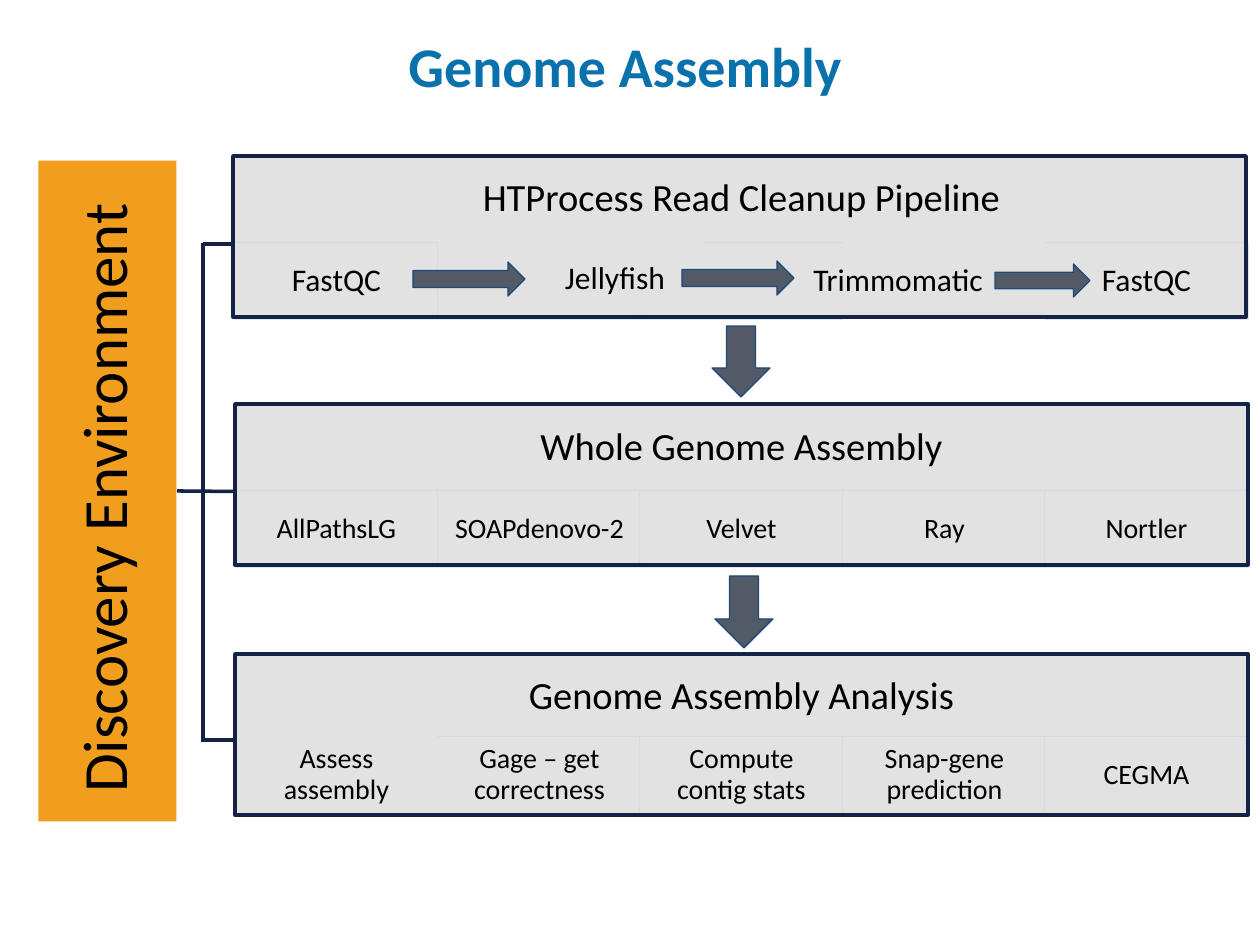
import pptx
import pptx.dml.color
import pptx.enum.shapes
import pptx.enum.text
import pptx.oxml
import pptx.oxml.ns
import pptx.util
import lxml.etree

SHAPE = pptx.enum.shapes.MSO_SHAPE
ALIGN = pptx.enum.text.PP_ALIGN
ANCHOR = pptx.enum.text.MSO_ANCHOR
qn = pptx.oxml.ns.qn

GREY, PALE, NAVY = "E2E2E2", "CFD7E7", "142248"
SLATE, BLUE, ORANGE, TITLE_BLUE = "525A68", "1F497D", "F19E1F", "0971AB"
FONT = "Calibri"


def px(value):
    return pptx.util.Emu(round(value * 914400 / 126))


def rgb(value):
    return pptx.dml.color.RGBColor.from_string(value)


class SlideBuilder:
    def __init__(self, slide):
        self.slide = slide

    def run(self, paragraph, text, size, color="000000", bold=False):
        run = paragraph.add_run()
        run.text = text
        run.font.name = FONT
        run.font.size = pptx.util.Pt(size)
        run.font.bold = bold
        run.font.color.rgb = rgb(color)

    def shape(self, kind, box, fill=None, line=None, width=0.75, alpha=None):
        shape = self.slide.shapes.add_shape(kind, *map(px, box))
        shape.shadow.inherit = False
        if fill:
            shape.fill.solid()
            shape.fill.fore_color.rgb = rgb(fill)
        else:
            shape.fill.background()
        if line:
            shape.line.color.rgb = rgb(line)
            shape.line.width = pptx.util.Pt(width)
        else:
            shape.line.fill.background()
        if alpha:
            for color in shape.element.spPr.iter(qn("a:srgbClr")):
                lxml.etree.SubElement(color, qn("a:alpha")).set("val", str(alpha * 1000))
        return shape

    def block(self, box, text="", size=16, margins=(15, 3), fill=GREY):
        block = self.shape(SHAPE.RECTANGLE, box, fill)
        if text:
            frame = block.text_frame
            frame.word_wrap = True
            frame.vertical_anchor = ANCHOR.MIDDLE
            frame.margin_left = frame.margin_right = px(margins[0])
            frame.margin_top = frame.margin_bottom = px(margins[1])
            paragraph = frame.paragraphs[0]
            paragraph.alignment = ALIGN.CENTER
            paragraph.line_spacing = 0.9
            self.run(paragraph, text, size)
        return block

    def underlay(self, box):
        self.shape(SHAPE.RECTANGLE, box, PALE, PALE, alpha=89)

    def arrow(self, kind, box):
        self.shape(kind, box, SLATE, BLUE)

    def frame(self, box):
        self.shape(SHAPE.RECTANGLE, box, line=NAVY, width=2)

    def line(self, x1, y1, x2, y2):
        line = self.slide.shapes.add_connector(
            pptx.enum.shapes.MSO_CONNECTOR.STRAIGHT, *map(px, (x1, y1, x2, y2)))
        line.line.color.rgb = rgb(NAVY)
        line.line.width = pptx.util.Pt(2)
        lxml.etree.SubElement(line.element.spPr, qn("a:effectLst"))
        return line

    def title(self, box, text):
        title = self.slide.shapes.add_textbox(*map(px, box))
        title.text_frame.word_wrap = True
        paragraph = title.text_frame.paragraphs[0]
        paragraph.alignment = ALIGN.CENTER
        self.run(paragraph, text, 32, TITLE_BLUE, bold=True)
        self.run(paragraph, " ", 24, TITLE_BLUE)


LEFT, WIDTH, HEADER_H, CELL_H, FRAME_H = 235, 1013, 88, 76, 161
CLEANUP_Y, ASSEMBLY_Y, ANALYSIS_Y = 243, 491, 737


def cell(column, top):
    column_width = WIDTH / 5
    return round(LEFT + column * column_width), top, round(column_width), CELL_H


def main():
    prs = pptx.Presentation()
    prs.slide_width, prs.slide_height = px(1260), px(945)
    builder = SlideBuilder(prs.slides.add_slide(prs.slide_layouts[6]))

    # Bracket from the environment bar to the three stages
    stem = builder.line(177, 491, 295, 492)
    for y in (244, 740):
        builder.line(203, y, 235, y)
    builder.line(203, 243, 203, 742)

    # Stage headers
    for top, heading in ((653, "Genome Assembly Analysis"),
                         (404, "Whole Genome Assembly"),
                         (155, "HTProcess Read Cleanup Pipeline")):
        builder.block((LEFT, top, WIDTH, HEADER_H), heading, 22, (21, 21))

    # Tools of the analysis and assembly stages
    analysis = ("Gage – get correctness", "Compute contig stats",
                "Snap-gene prediction", "CEGMA")
    assembly = ("AllPathsLG", "SOAPdenovo-2", "Velvet", "Ray", "Nortler")
    for top, first, tools in ((ANALYSIS_Y, 1, analysis), (ASSEMBLY_Y, 0, assembly)):
        for column, tool in enumerate(tools, first):
            builder.underlay(cell(column, top))
            builder.block(cell(column, top), tool)
    builder.block(cell(0, ANALYSIS_Y), "Assess assembly")

    # Cleanup steps
    for column in (0, 2, 4):
        builder.underlay(cell(column, CLEANUP_Y))
    for column in (0, 4):
        builder.block(cell(column, CLEANUP_Y), "FastQC", 18, (14, 3))
    builder.block((895, CLEANUP_Y, 150, CELL_H))
    builder.underlay(cell(1, CLEANUP_Y))
    builder.block((673, CLEANUP_Y, 121, CELL_H))
    builder.block((438, 241, 121, CELL_H))
    builder.block((794, CLEANUP_Y, 208, CELL_H), "Trimmomatic", 18, (14, 3))
    builder.block((528, 241, 174, CELL_H), "Jellyfish", 18, (20, 4))
    for box in ((413, 262, 112, 34), (682, 261, 112, 34), (995, 264, 95, 33)):
        builder.arrow(SHAPE.RIGHT_ARROW, box)

    # Arrows between stages
    for box in ((712, 326, 58, 71), (715, 576, 58, 72)):
        builder.arrow(SHAPE.DOWN_ARROW, box)

    # Stage outlines
    for left, top in ((LEFT, 404), (LEFT, 654), (233, 156)):
        builder.frame((left, top, WIDTH, FRAME_H))

    # Environment bar, turned to read upwards
    bar = builder.block((-223, 422, 661, 138), "Discovery Environment ", 36,
                        (4, 4), ORANGE)
    bar.rotation = 270
    stem.begin_connect(bar, 2)
    stem.begin_x, stem.begin_y = px(177), px(491)

    builder.title((0, 25, 1260, 165), "Genome Assembly")
    prs.save("out.pptx")


if __name__ == "__main__":
    main()
